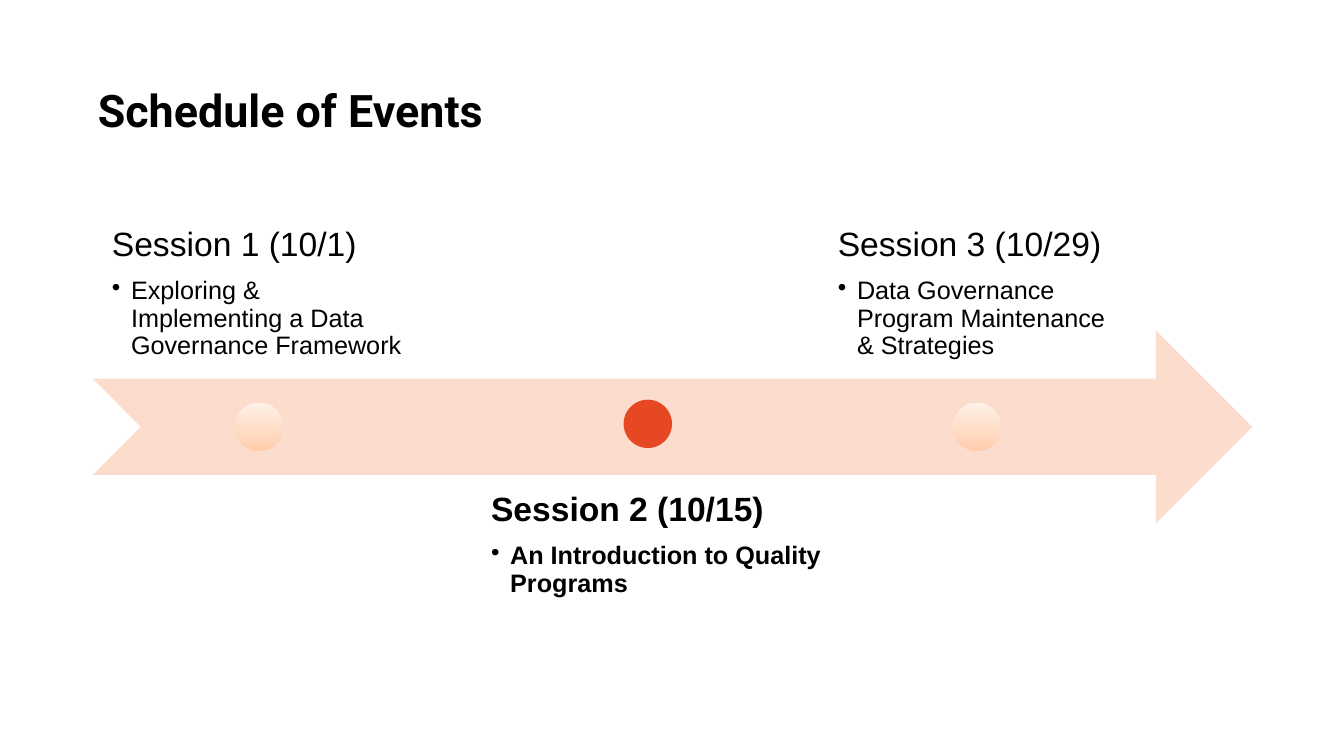
from copy import deepcopy
from dataclasses import dataclass

from lxml.etree import SubElement
from pptx import Presentation
from pptx.dml.color import RGBColor
from pptx.enum.shapes import MSO_SHAPE
from pptx.enum.text import MSO_ANCHOR, PP_ALIGN
from pptx.oxml.ns import qn
from pptx.util import Inches, Pt


@dataclass(frozen=True)
class Theme:
    text: str = "000000"
    arrow: str = "FCDCCD"
    current: str = "E64823"
    other_stops: tuple = ((0, "FFCCA9"), (0.35, "FFDAC2"), (1, "FFF1E8"))
    title_font: str = "Roboto"
    body_font: str = "Arial"
    title_size: int = 32
    session_size: int = 24
    topic_size: int = 18


THEME = Theme()
TITLE = "Schedule of Events"
SESSIONS = [
    {"name": "Session 1 (10/1)", "topic": "Exploring & Implementing a Data Governance Framework",
     "left": 0.92, "width": 3.3, "current": False},
    {"name": "Session 2 (10/15)", "topic": "An Introduction to Quality Programs",
     "left": 4.68, "width": 3.69, "current": True},
    {"name": "Session 3 (10/29)", "topic": "Data Governance Program Maintenance & Strategies",
     "left": 8.12, "width": 3.14, "current": False},
]
LEFT, WIDTH = 0.92, 11.5
BAND_HEIGHT = 1.91
UPPER_TOP, ARROW_TOP, LOWER_TOP = 1.85, 3.28, 4.7
MARKER = 0.48
CURRENT_LIFT = 0.03
INSET = 0.19


def set_insets(frame, inset):
    frame.margin_left = frame.margin_right = Inches(inset)
    frame.margin_top = frame.margin_bottom = Inches(inset)


def style(paragraph, font_name, size, bold):
    paragraph.alignment = PP_ALIGN.LEFT
    paragraph.line_spacing = 0.9
    paragraph.font.name = font_name
    paragraph.font.size = Pt(size)
    paragraph.font.bold = bold
    paragraph.font.color.rgb = RGBColor.from_string(THEME.text)


def add_bullet(paragraph):
    properties = paragraph._p.get_or_add_pPr()
    properties.set("marL", str(Inches(INSET)))
    properties.set("indent", str(-Inches(INSET)))
    SubElement(properties, qn("a:buChar")).set("char", "•")


def add_plain_shape(slide, kind, left, top, width, height):
    shape = slide.shapes.add_shape(kind, Inches(left), Inches(top), Inches(width), Inches(height))
    shape.shadow.inherit = False
    shape.line.fill.background()
    return shape


def fill_solid(shape, color):
    shape.fill.solid()
    shape.fill.fore_color.rgb = RGBColor.from_string(color)


def fill_gradient(shape, stops):
    shape.fill.gradient()
    shape.fill.gradient_angle = 90
    stop_list = shape._element.spPr.find(f".//{qn('a:gsLst')}")
    while len(stop_list) < len(stops):
        stop_list.append(deepcopy(stop_list[0]))
    for stop, (position, color) in zip(shape.fill.gradient_stops, stops):
        stop.position = position
        stop.color.rgb = RGBColor.from_string(color)


def add_session(slide, session):
    current = session["current"]
    top = LOWER_TOP if current else UPPER_TOP
    label = slide.shapes.add_textbox(Inches(session["left"]), Inches(top),
                                     Inches(session["width"]), Inches(BAND_HEIGHT))
    frame = label.text_frame
    frame.word_wrap = True
    frame.vertical_anchor = MSO_ANCHOR.TOP if current else MSO_ANCHOR.BOTTOM
    set_insets(frame, INSET)

    name = frame.paragraphs[0]
    name.text = session["name"]
    name.space_after = Pt(10)
    style(name, THEME.body_font, THEME.session_size, current)

    topic = frame.add_paragraph()
    topic.text = session["topic"]
    topic.level = 1
    topic.space_before = Pt(0)
    topic.space_after = Pt(3)
    add_bullet(topic)
    style(topic, THEME.body_font, THEME.topic_size, current)

    marker_left = session["left"] + (session["width"] - MARKER) / 2
    marker_top = ARROW_TOP + (BAND_HEIGHT - MARKER) / 2
    if current:
        marker_left -= 0.1
        marker_top -= CURRENT_LIFT
    marker = add_plain_shape(slide, MSO_SHAPE.OVAL, marker_left, marker_top, MARKER, MARKER)
    if current:
        fill_solid(marker, THEME.current)
    else:
        fill_gradient(marker, THEME.other_stops)


def main():
    presentation = Presentation()
    presentation.slide_width, presentation.slide_height = Inches(13.33), Inches(7.5)
    slide = presentation.slides.add_slide(presentation.slide_layouts[5])

    title = slide.shapes.title
    title.left, title.top = Inches(LEFT), Inches(0.4)
    title.width, title.height = Inches(WIDTH), Inches(1.45)
    title.text = TITLE
    title.text_frame.vertical_anchor = MSO_ANCHOR.MIDDLE
    set_insets(title.text_frame, 0.05)
    style(title.text_frame.paragraphs[0], THEME.title_font, THEME.title_size, True)

    arrow = add_plain_shape(slide, MSO_SHAPE.NOTCHED_RIGHT_ARROW, LEFT, ARROW_TOP, WIDTH, BAND_HEIGHT)
    fill_solid(arrow, THEME.arrow)
    for session in SESSIONS:
        add_session(slide, session)

    presentation.save("out.pptx")


if __name__ == "__main__":
    main()
